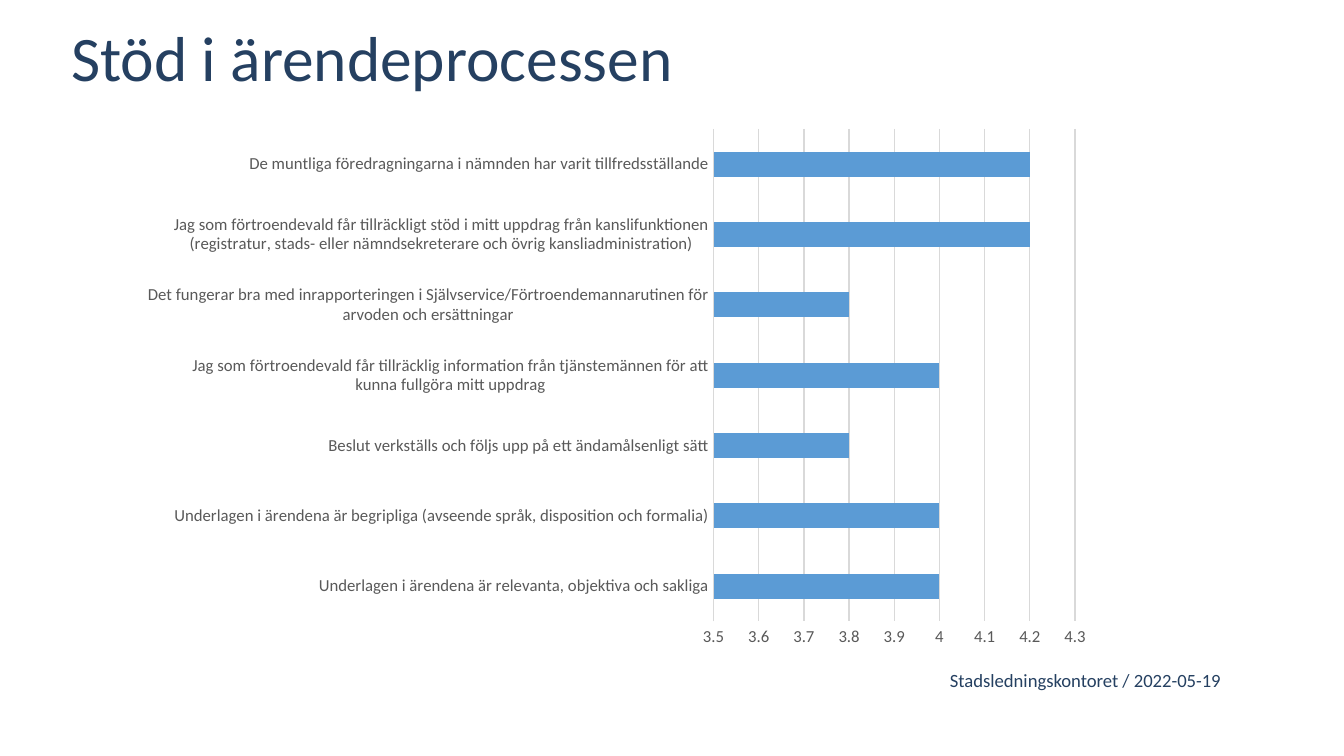
from pptx import Presentation
from pptx.chart.data import CategoryChartData
from pptx.dml.color import RGBColor
from pptx.enum.chart import XL_CHART_TYPE, XL_TICK_MARK
from pptx.enum.text import MSO_ANCHOR, PP_ALIGN
from pptx.util import Inches, Pt

BAR = XL_CHART_TYPE.BAR_CLUSTERED
NO_TICK = XL_TICK_MARK.NONE
TOP, BOTTOM = MSO_ANCHOR.TOP, MSO_ANCHOR.BOTTOM
LEFT, RIGHT = PP_ALIGN.LEFT, PP_ALIGN.RIGHT
NAVY, BLUE, GREY, PALE = "254061", "5B9BD5", "595959", "D9D9D9"


def color(code):
    return RGBColor.from_string(code)


def style(font, size, code):
    font.name = "Calibri"
    font.size = Pt(size)
    font.color.rgb = color(code)


deck = Presentation()
deck.slide_width = Inches(10)
deck.slide_height = Inches(10) * 9 // 16
slide = deck.slides.add_slide(deck.slide_layouts[6])

texts = [
    ("Stadsledningskontoret / 2022-05-19", (5.24, 4.92, 3.94, 0.27), 10, RIGHT, BOTTOM, 1, (0.1, 0.05)),
    ("Stöd i ärendeprocessen", (0.53, 0.2, 9.13, 0.67), 34, LEFT, TOP, 0.9, (0, 0)),
]
for text, place, size, align, anchor, space, (side, edge) in texts:
    box = slide.shapes.add_textbox(*[Inches(n) for n in place])
    frame = box.text_frame
    frame.word_wrap = True
    frame.vertical_anchor = anchor
    frame.margin_left = frame.margin_right = Inches(side)
    frame.margin_top = frame.margin_bottom = Inches(edge)
    line = frame.paragraphs[0]
    line.text = text
    line.alignment = align
    line.line_spacing = space
    style(line.font, size, NAVY)

scores = [
    ("Underlagen i ärendena är relevanta, objektiva och sakliga", 4),
    ("Underlagen i ärendena är begripliga (avseende språk, disposition och formalia)", 4),
    ("Beslut verkställs och följs upp på ett ändamålsenligt sätt", 3.8),
    ("Jag som förtroendevald får tillräcklig information från tjänstemännen för att kunna fullgöra mitt uppdrag", 4),
    ("Det fungerar bra med inrapporteringen i Självservice/Förtroendemannarutinen för arvoden och ersättningar", 3.8),
    ("Jag som förtroendevald får tillräckligt stöd i mitt uppdrag från kanslifunktionen "
     "(registratur, stads- eller nämndsekreterare och övrig kansliadministration)", 4.2),
    ("De muntliga föredragningarna i nämnden har varit tillfredsställande", 4.2),
]
data = CategoryChartData()
data.categories = [label for label, score in scores]
data.add_series("Series 1", [score for label, score in scores])
place = [Inches(n) for n in (1.1, 0.88, 7.12, 4.01)]
chart = slide.shapes.add_chart(BAR, *place, data).chart
style(chart.font, 10, "000000")
chart.has_legend = False
chart.has_title = False

plot = chart.plots[0]
plot.gap_width = 182
plot.vary_by_categories = False
fill = plot.series[0].format.fill
fill.solid()
fill.fore_color.rgb = color(BLUE)

items, scale = chart.category_axis, chart.value_axis
for axis in (items, scale):
    axis.major_tick_mark = axis.minor_tick_mark = NO_TICK
    style(axis.tick_labels.font, 9, GREY)
scale.minimum_scale = 3.5
scale.maximum_scale = 4.3
scale.major_unit = 0.1
scale.tick_labels.number_format = "General"
scale.tick_labels.number_format_is_linked = False
scale.has_major_gridlines = True
scale.format.line.fill.background()
for line in (items.format.line, scale.major_gridlines.format.line):
    line.color.rgb = color(PALE)
    line.width = Pt(0.75)

deck.save("out.pptx")
